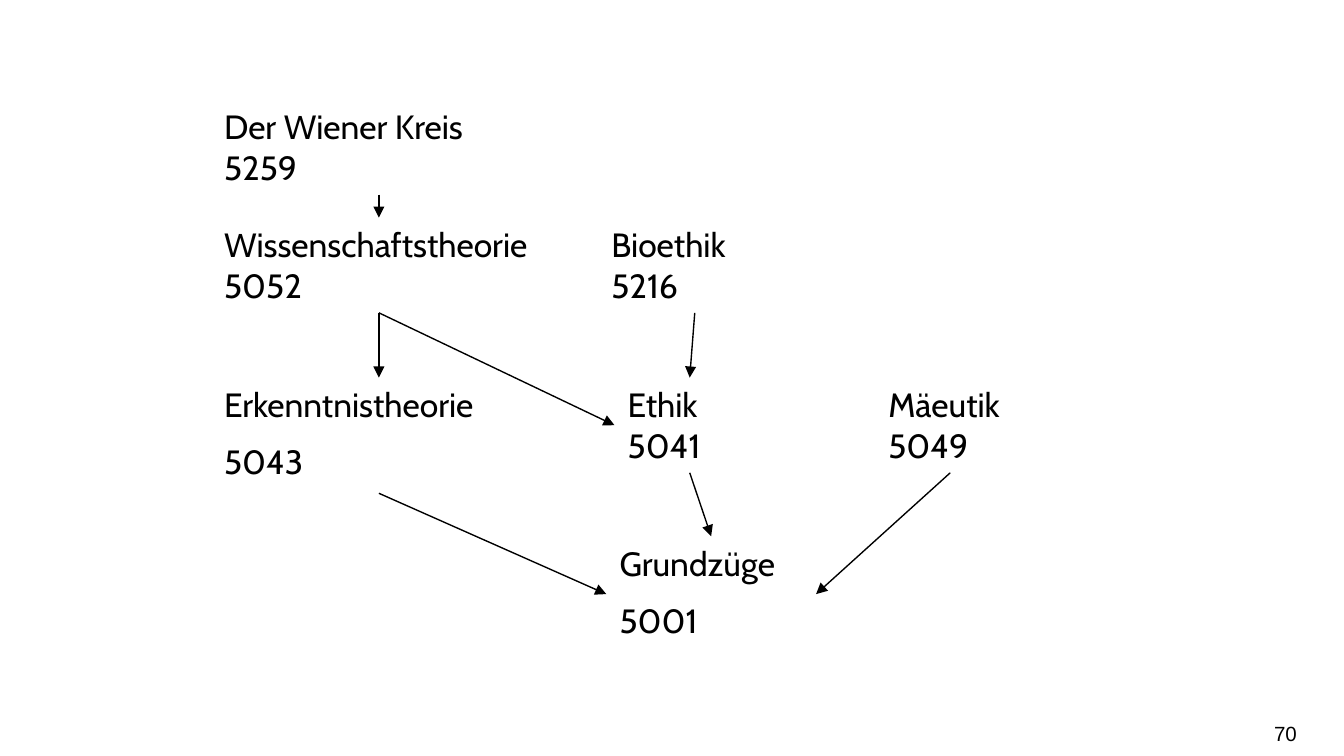
from lxml.etree import SubElement
from pptx import Presentation
from pptx.dml.color import RGBColor
from pptx.enum.shapes import MSO_CONNECTOR
from pptx.enum.text import MSO_ANCHOR, MSO_AUTO_SIZE, PP_ALIGN
from pptx.oxml.ns import qn
from pptx.util import Pt

COLORS = {"ink": "000000", "background": "FFFFFF"}
TOP, LEFT, BOTTOM, RIGHT = 0, 1, 2, 3
ROW_TOPS = [53.3, 116.6, 202.3, 287.3]
ONE_PARAGRAPH_HEIGHT, TWO_PARAGRAPH_HEIGHT = 51, 62

COURSES = {
    "Wiener Kreis": (["Der Wiener Kreis 5259"], 113, 0, 180),
    "Wissenschaftstheorie": (["Wissenschaftstheorie 5052"], 113, 1, 180),
    "Bioethik": (["Bioethik 5216"], 320.4, 1, 103.6),
    "Erkenntnistheorie": (["Erkenntnistheorie", "5043"], 113, 2, 180),
    "Ethik": (["Ethik 5041"], 329.2, 2, 80.6),
    "Mäeutik": (["Mäeutik 5049"], 468.8, 2, 80.6),
    "Grundzüge": (["Grundzüge", "5001"], 324.8, 3, 112.4),
}
ARROWS = [
    ("Wiener Kreis", "Wissenschaftstheorie", TOP),
    ("Wissenschaftstheorie", "Erkenntnistheorie", TOP),
    ("Wissenschaftstheorie", "Ethik", LEFT),
    ("Bioethik", "Ethik", TOP),
    ("Erkenntnistheorie", "Grundzüge", LEFT),
    ("Ethik", "Grundzüge", TOP),
    ("Mäeutik", "Grundzüge", RIGHT),
]
PAGE_NUMBER = "70"


def add_text(slide, lines, left, top, width, height, font_name, size):
    box = slide.shapes.add_textbox(Pt(left), Pt(top), Pt(width), Pt(height))
    frame = box.text_frame
    frame.word_wrap = True
    frame.text = "\n".join(lines)
    for index, paragraph in enumerate(frame.paragraphs):
        if index:
            paragraph.space_before = Pt(size / 2)
        for run in paragraph.runs:
            run.font.name = font_name
            run.font.size = Pt(size)
            run.font.color.rgb = RGBColor.from_string(COLORS["ink"])
    return box


def add_course(slide, lines, left, row, width):
    height = TWO_PARAGRAPH_HEIGHT if len(lines) > 1 else ONE_PARAGRAPH_HEIGHT
    box = add_text(slide, lines, left, ROW_TOPS[row], width, height, "Cabin", 18)
    box.text_frame.auto_size = MSO_AUTO_SIZE.SHAPE_TO_FIT_TEXT
    return box


def add_arrow(slide, source, target, side):
    connector = slide.shapes.add_connector(MSO_CONNECTOR.STRAIGHT, 0, 0, 0, 0)
    connector.begin_connect(source, BOTTOM)
    connector.end_connect(target, side)
    connector.line.width = Pt(0.75)
    connector.line.color.rgb = RGBColor.from_string(COLORS["ink"])
    SubElement(connector.line._get_or_add_ln(), qn("a:tailEnd"), type="triangle")
    SubElement(connector._element.spPr, qn("a:effectLst"))


def main():
    presentation = Presentation()
    presentation.slide_width, presentation.slide_height = Pt(720), Pt(405)
    slide = presentation.slides.add_slide(presentation.slide_layouts[6])
    slide.background.fill.solid()
    slide.background.fill.fore_color.rgb = RGBColor.from_string(COLORS["background"])

    boxes = {name: add_course(slide, *course) for name, course in COURSES.items()}
    for source, target, side in ARROWS:
        add_arrow(slide, boxes[source], boxes[target], side)

    number = add_text(slide, [PAGE_NUMBER], 533.5, 382.3, 161.3, 21.6, "Arial", 11)
    number.text_frame.margin_left = number.text_frame.margin_right = 0
    number.text_frame.vertical_anchor = MSO_ANCHOR.MIDDLE
    number.text_frame.paragraphs[0].alignment = PP_ALIGN.RIGHT

    presentation.save("out.pptx")


if __name__ == "__main__":
    main()
